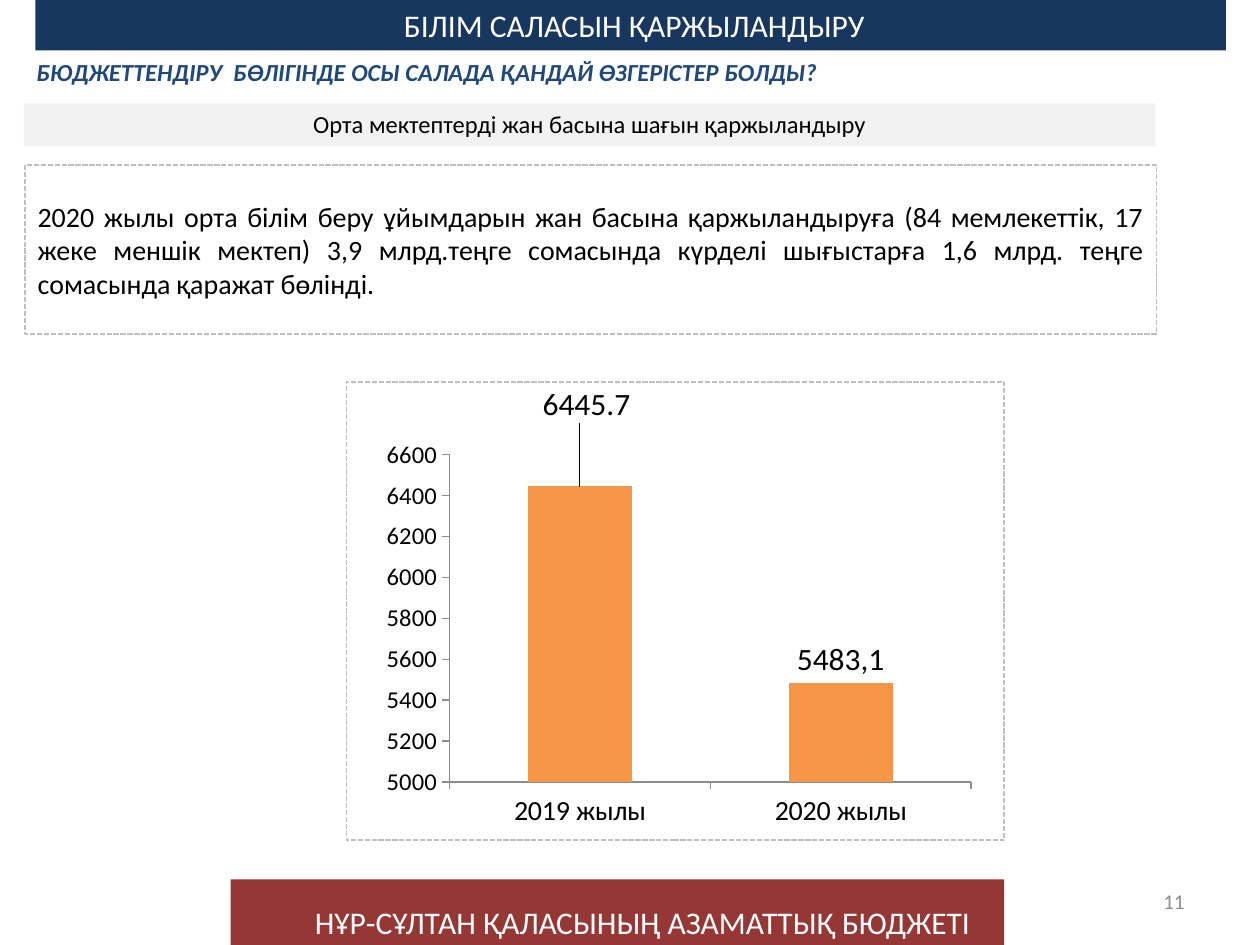
from lxml.etree import SubElement
from pptx import Presentation
from pptx.chart.data import CategoryChartData
from pptx.dml.color import RGBColor
from pptx.enum.chart import XL_CHART_TYPE, XL_LABEL_POSITION, XL_TICK_MARK
from pptx.enum.dml import MSO_LINE
from pptx.enum.shapes import MSO_SHAPE
from pptx.enum.text import MSO_ANCHOR, PP_ALIGN
from pptx.oxml import parse_xml
from pptx.oxml.ns import nsdecls, qn
from pptx.util import Inches, Pt

WIDTH, HEIGHT = Inches(10), Inches(7.5)
FONT = "Calibri"
NAVY, MAROON, BLUE, ORANGE = "17375E", "953735", "1F497D", "F79646"
WHITE, BLACK, PALE, BORDER, GREY = "FFFFFF", "000000", "F2F2F2", "BFBFBF", "8C8C8C"


def color(value):
    return RGBColor.from_string(value)


def place(left, top, width, height):
    """Turn percentages of the slide's size into lengths."""
    return (int(WIDTH * left / 100), int(HEIGHT * top / 100),
            int(WIDTH * width / 100), int(HEIGHT * height / 100))


def style_font(font, size, fill=BLACK, bold=False, italic=False):
    font.name, font.size = FONT, Pt(size)
    font.bold, font.italic = bold, italic
    font.color.rgb = color(fill)


def write(sp, text, align=PP_ALIGN.LEFT, anchor=MSO_ANCHOR.TOP, **style):
    tf = sp.text_frame
    tf.word_wrap = True
    tf.vertical_anchor = anchor
    p = tf.paragraphs[0]
    p.alignment = align
    r = p.add_run()
    r.text = text
    style_font(r.font, **style)


def add_text(s, box, text, **style):
    write(s.shapes.add_textbox(*place(*box)), text, **style)


def add_band(s, box, fill):
    sp = s.shapes.add_shape(MSO_SHAPE.RECTANGLE, *place(*box))
    sp.shadow.inherit = False
    sp.fill.solid()
    sp.fill.fore_color.rgb = color(fill)
    sp.line.fill.background()
    return sp


def add_dashed_frame(s, box):
    sp = s.shapes.add_shape(MSO_SHAPE.RECTANGLE, *place(*box))
    sp.shadow.inherit = False
    sp.fill.background()
    sp.line.color.rgb = color(BORDER)
    sp.line.width = Pt(1)
    sp.line.dash_style = MSO_LINE.SQUARE_DOT
    return sp


def manual_layout(**values):
    layout = parse_xml(f"<c:layout {nsdecls('c')}><c:manualLayout/></c:layout>")
    for name, value in values.items():
        SubElement(layout[0], qn(f"c:{name}")).set("val", str(value))
    return layout


def style_axis(axis, size):
    axis.has_major_gridlines = False
    axis.major_tick_mark = XL_TICK_MARK.OUTSIDE
    axis.minor_tick_mark = XL_TICK_MARK.NONE
    axis.format.line.color.rgb = color(GREY)
    style_font(axis.tick_labels.font, size)


def add_funding_chart(s, box):
    data = CategoryChartData()
    data.categories = ["2019 жылы", "2020 жылы"]
    data.add_series("Series 1", (6445.7, 5483.1))
    chart = s.shapes.add_chart(XL_CHART_TYPE.COLUMN_CLUSTERED, *place(*box), data).chart
    chart.has_legend = chart.has_title = False
    style_font(chart.font, 18)

    # Axes and plot area
    style_axis(chart.category_axis, 16)
    axis = chart.value_axis
    style_axis(axis, 14)
    axis.minimum_scale, axis.maximum_scale, axis.major_unit = 5000, 6600, 200
    area = chart.plots[0]._element.getparent()
    for old in area.findall(qn("c:layout")):
        area.remove(old)
    area.insert(0, manual_layout(layoutTarget="inner", xMode="edge", yMode="edge",
                                 x=0.16, y=0.14, w=0.79, h=0.73))

    # Columns
    plot = chart.plots[0]
    plot.gap_width, plot.vary_by_categories = 150, False
    series = plot.series[0]
    series.format.fill.solid()
    series.format.fill.fore_color.rgb = color(ORANGE)

    # Value labels: the first is raised, the second has its own wording
    labels = series.data_labels
    labels.show_value = True
    labels.position = XL_LABEL_POSITION.OUTSIDE_END
    style_font(labels.font, 18)
    first, second = (series.points[i].data_label for i in range(2))
    style_font(first.font, 18)
    second.text_frame.text = "5483,1"
    style_font(second.text_frame.paragraphs[0].runs[0].font, 18)
    for label in (first, second):
        label.position = XL_LABEL_POSITION.OUTSIDE_END
    first_xml = labels._element.find(qn("c:dLbl"))
    first_xml.insert(1, manual_layout(x=0.01, y=-0.13))


def main():
    prs = Presentation()
    prs.slide_width, prs.slide_height = WIDTH, HEIGHT
    s = prs.slides.add_slide(prs.slide_layouts[6])

    # Footer
    add_band(s, (18.3, 93.07, 61.4, 7.2), MAROON)
    add_text(s, (24, 94.93, 67.7, 5.33), "НҰР-СҰЛТАН ҚАЛАСЫНЫҢ АЗАМАТТЫҚ БЮДЖЕТІ",
             size=18, fill=WHITE, align=PP_ALIGN.JUSTIFY)
    add_text(s, (71.7, 92.67, 23.3, 5.33), "11", size=12, fill=GREY,
             align=PP_ALIGN.RIGHT, anchor=MSO_ANCHOR.MIDDLE)

    # Chart in its frame
    add_funding_chart(s, (27.3, 40.8, 52.4, 48.13))
    add_dashed_frame(s, (27.5, 40.4, 52.2, 48.53))

    # Title and question
    add_band(s, (2.8, 0, 94.5, 5.33), NAVY)
    add_text(s, (10.2, 0, 80.3, 5.33), "БІЛІМ САЛАСЫН ҚАРЖЫЛАНДЫРУ",
             size=18, fill=WHITE, align=PP_ALIGN.CENTER)
    add_text(s, (1.9, 5.33, 80.4, 4.53),
             "БЮДЖЕТТЕНДІРУ  БӨЛІГІНДЕ ОСЫ САЛАДА ҚАНДАЙ ӨЗГЕРІСТЕР БОЛДЫ?",
             size=14, fill=BLUE, bold=True, italic=True)

    # Topic and explanation
    write(add_band(s, (1.9, 10.93, 89.8, 4.53), PALE),
          "Орта мектептерді жан басына шағын қаржыландыру",
          size=14, align=PP_ALIGN.CENTER)
    write(add_dashed_frame(s, (2, 17.47, 89.8, 17.87)),
          "2020 жылы орта білім беру ұйымдарын жан басына қаржыландыруға "
          "(84 мемлекеттік, 17 жеке меншік мектеп) 3,9 млрд.теңге сомасында "
          "күрделі шығыстарға 1,6 млрд. теңге сомасында қаражат бөлінді.",
          size=16, align=PP_ALIGN.JUSTIFY, anchor=MSO_ANCHOR.MIDDLE)

    prs.save("out.pptx")


if __name__ == "__main__":
    main()
